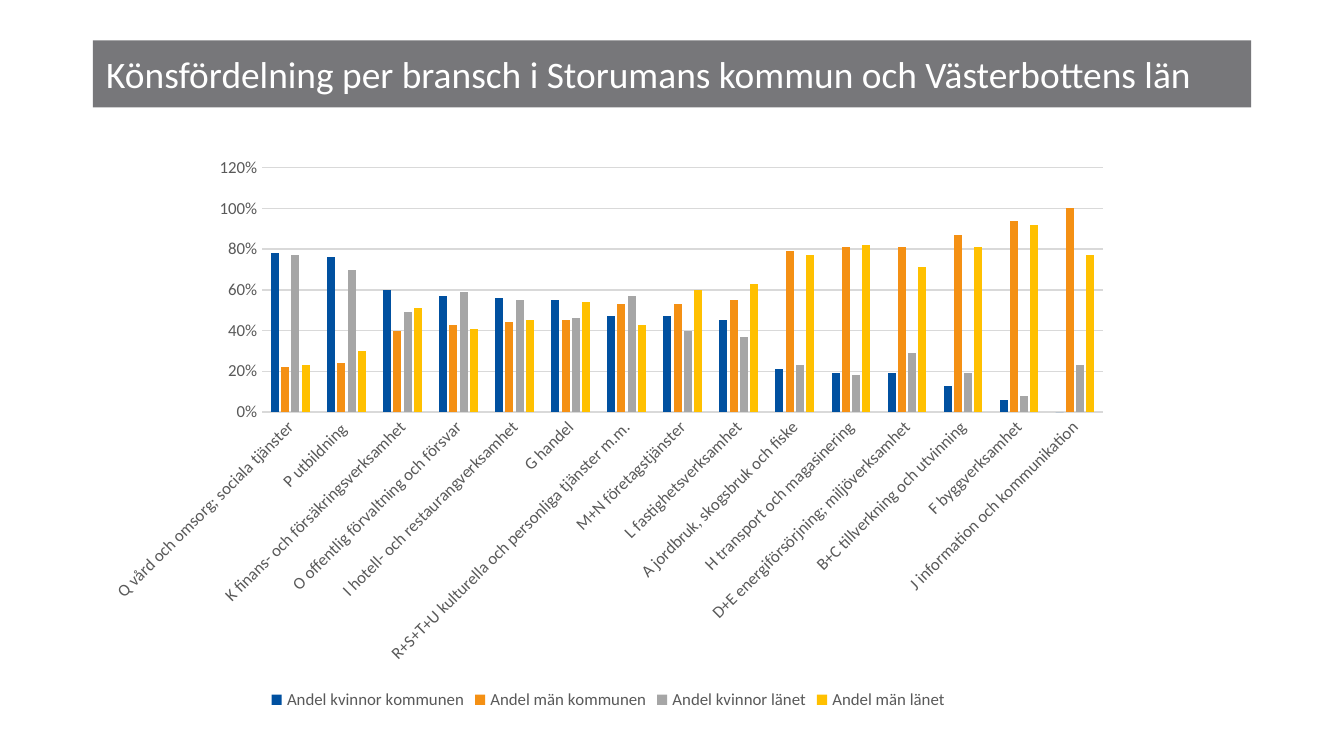
from pptx import Presentation
from pptx.chart.data import CategoryChartData
from pptx.dml.color import RGBColor
from pptx.enum.chart import XL_CHART_TYPE, XL_LEGEND_POSITION, XL_TICK_MARK
from pptx.enum.text import MSO_ANCHOR, MSO_AUTO_SIZE, PP_ALIGN
from pptx.util import Inches, Pt

CLUSTERED = XL_CHART_TYPE.COLUMN_CLUSTERED
LEGEND_BOTTOM = XL_LEGEND_POSITION.BOTTOM
NO_TICK = XL_TICK_MARK.NONE
MIDDLE = MSO_ANCHOR.MIDDLE
NO_AUTOFIT = MSO_AUTO_SIZE.NONE
LEFT = PP_ALIGN.LEFT

FONT = "Calibri"
TITLE_ONLY = 5
LABEL_ROTATION = -45 * 60000  # 60000ths of a degree
COLORS = {
    "banner": "77777A",
    "title": "FFFFFF",
    "label": "595959",
    "grid": "D9D9D9",
    "women_municipality": "0050A0",
    "men_municipality": "F49014",
    "women_county": "A6A6A6",
    "men_county": "FFC000",
}

TITLE = "Könsfördelning per bransch i Storumans kommun och Västerbottens län"
INDUSTRIES = [
    "Q vård och omsorg; sociala tjänster",
    "P utbildning ",
    "K finans- och försäkringsverksamhet",
    "O offentlig förvaltning och försvar",
    "I hotell- och restaurangverksamhet",
    "G handel",
    "R+S+T+U kulturella och personliga tjänster m.m.",
    "M+N företagstjänster",
    "L fastighetsverksamhet",
    "A jordbruk, skogsbruk och fiske",
    "H transport och magasinering",
    "D+E energiförsörjning; miljöverksamhet",
    "B+C tillverkning och utvinning",
    "F byggverksamhet",
    "J information och kommunikation",
]
SHARES = [
    ("Andel kvinnor kommunen", "women_municipality",
     [0.78, 0.76, 0.6, 0.57, 0.56, 0.55, 0.47, 0.47, 0.45, 0.21, 0.19, 0.19, 0.13, 0.06, 0]),
    ("Andel män kommunen", "men_municipality",
     [0.22, 0.24, 0.4, 0.43, 0.44, 0.45, 0.53, 0.53, 0.55, 0.79, 0.81, 0.81, 0.87, 0.94, 1]),
    ("Andel kvinnor länet", "women_county",
     [0.77, 0.7, 0.49, 0.59, 0.55, 0.46, 0.57, 0.4, 0.37, 0.23, 0.18, 0.29, 0.19, 0.08, 0.23]),
    ("Andel män länet", "men_county",
     [0.23, 0.3, 0.51, 0.41, 0.45, 0.54, 0.43, 0.6, 0.63, 0.77, 0.82, 0.71, 0.81, 0.92, 0.77]),
]


def color(name):
    return RGBColor.from_string(COLORS[name])


def style_font(font, size, color_name):
    font.name = FONT
    font.size = Pt(size)
    font.bold = False
    font.color.rgb = color(color_name)


def style_line(line):
    line.color.rgb = color("grid")
    line.width = Pt(0.75)


def add_title(slide):
    banner = slide.shapes.title
    banner.left, banner.top = Inches(0.69), Inches(0.3)
    banner.width, banner.height = Inches(8.62), Inches(0.5)
    banner.fill.solid()
    banner.fill.fore_color.rgb = color("banner")
    frame = banner.text_frame
    frame.text = TITLE
    frame.auto_size = NO_AUTOFIT
    frame.vertical_anchor = MIDDLE
    heading = frame.paragraphs[0]
    heading.alignment = LEFT
    style_font(heading.runs[0].font, 20, "title")


def style_axes(chart):
    industry_axis, share_axis = chart.category_axis, chart.value_axis
    for axis in (industry_axis, share_axis):
        axis.major_tick_mark = axis.minor_tick_mark = NO_TICK
        style_font(axis.tick_labels.font, 9, "label")

    # Slanted industry names
    style_line(industry_axis.format.line)
    label_body = industry_axis._element.txPr.bodyPr
    label_body.set("rot", str(LABEL_ROTATION))
    label_body.set("vert", "horz")

    # Percentage scale
    share_axis.minimum_scale, share_axis.maximum_scale = 0, 1.2
    share_axis.major_unit = 0.2
    share_axis.tick_labels.number_format = "0%"
    share_axis.tick_labels.number_format_is_linked = False
    share_axis.format.line.fill.background()
    style_line(share_axis.major_gridlines.format.line)


def add_share_chart(slide):
    shares = CategoryChartData(number_format="0%")
    shares.categories = INDUSTRIES
    for name, _, values in SHARES:
        shares.add_series(name, values)
    chart = slide.shapes.add_chart(
        CLUSTERED, Inches(0.69), Inches(1.09), Inches(7.67), Inches(4.23), shares
    ).chart
    chart.has_title = False
    chart.font.name, chart.font.size = FONT, Pt(10)

    # Columns
    plot = chart.plots[0]
    plot.gap_width, plot.overlap = 219, -27
    plot.vary_by_categories = False
    for series, (_, color_name, _) in zip(plot.series, SHARES):
        series.format.fill.solid()
        series.format.fill.fore_color.rgb = color(color_name)

    style_axes(chart)

    # Legend
    chart.has_legend = True
    chart.legend.position = LEGEND_BOTTOM
    chart.legend.include_in_layout = False
    style_font(chart.legend.font, 9, "label")


def main():
    deck = Presentation()
    # Widescreen, 16:9
    deck.slide_width = Inches(10)
    deck.slide_height = Inches(10 * 9 / 16)
    slide = deck.slides.add_slide(deck.slide_layouts[TITLE_ONLY])
    add_title(slide)
    add_share_chart(slide)
    deck.save("out.pptx")


if __name__ == "__main__":
    main()
